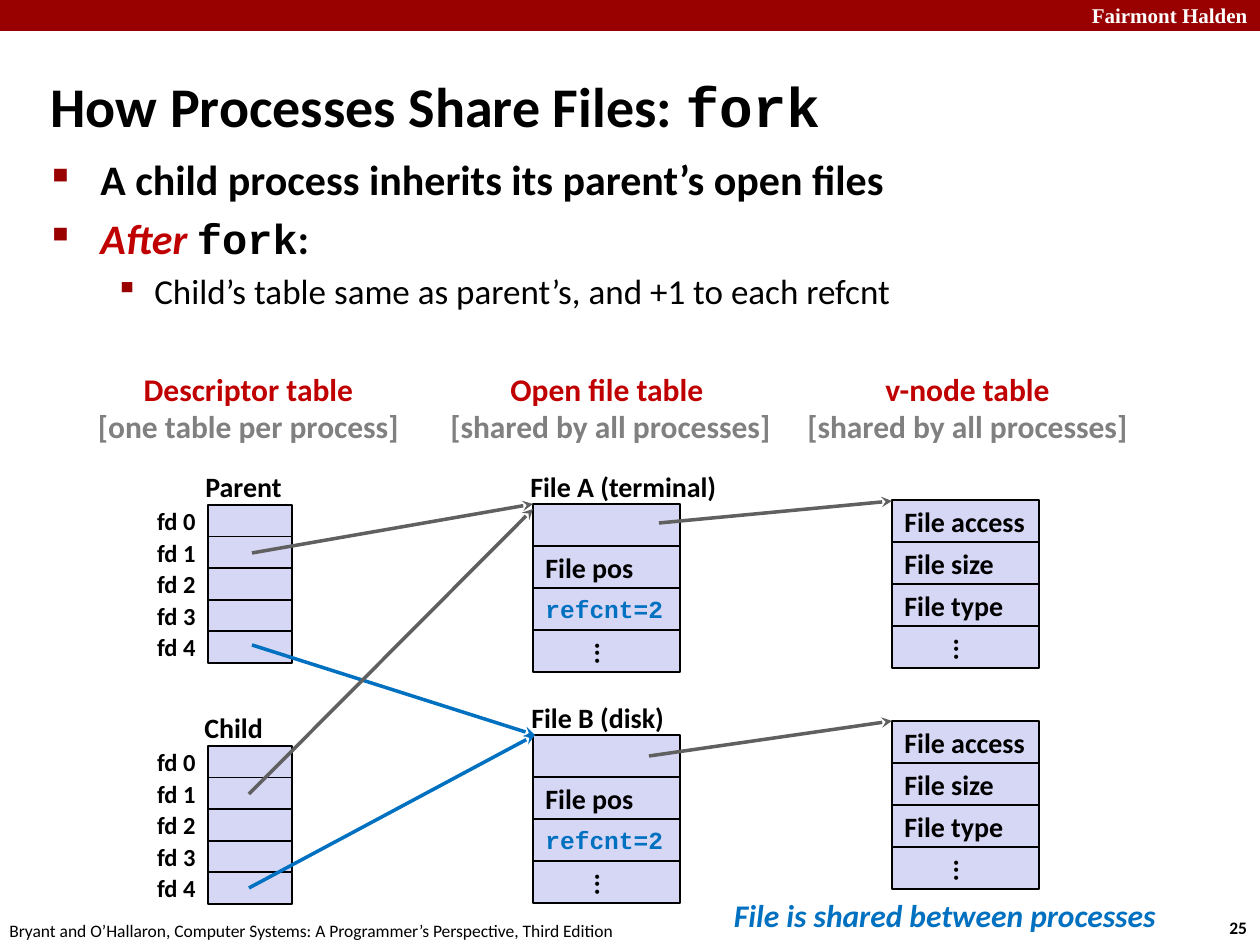
from lxml import etree
from pptx import Presentation
from pptx.dml.color import RGBColor
from pptx.enum.shapes import MSO_CONNECTOR, MSO_SHAPE
from pptx.enum.text import MSO_ANCHOR, PP_ALIGN
from pptx.oxml.ns import qn
from pptx.util import Emu, Pt

RECT, LINE = MSO_SHAPE.RECTANGLE, MSO_CONNECTOR.STRAIGHT
TOP, MID = MSO_ANCHOR.TOP, MSO_ANCHOR.MIDDLE
LEFT, CENTER, RIGHT = PP_ALIGN.LEFT, PP_ALIGN.CENTER, PP_ALIGN.RIGHT
SCALE = 914400 / 126

BLACK, WHITE, BAR, RED = "000000", "FFFFFF", "990000", "C00000"
GRAY, DARK, BLUE, LILAC = "808080", "606060", "0070C0", "D6D6F5"
CODE = {"name": "Courier New"}

TITLE = [("How Processes Share Files: ", {}), ("fork", CODE)]
BODY = [
    [("A child process inherits its parent’s open files", {})],
    [("After ", {"color": RED, "italic": True}), ("fork", CODE), (":", {})],
    [("Child’s table same as parent’s, and +1 to each refcnt",
      {"size": 20, "bold": False})],
]
# left margin, hanging indent (px), space before (pt), bullet, bullet size (%)
LEVELS = [(48, 48, 5, "■", 52), (48, 48, 5, "■", 52), (102, 39, 4, "▪", 90)]

HEADS = [  # left, width, name, scope
    (84, 329, "Descriptor table", "[one table per process]"),
    (436, 349, "Open file table ", "[shared by all processes]"),
    (793, 349, "v-node table", "[shared by all processes]"),
]
LABELS = [
    ((193, 463, 102, 46), "Parent"),
    ((192, 704, 84, 46), "Child"),
    ((518, 463, 213, 46), "File A (terminal)"),
    ((519, 694, 160, 46), "File B (disk)"),
]
SLOTS = ["fd 0", "fd 1", "fd 2", "fd 3", "fd 4"]
OPEN = ["", "File pos", "refcnt=2", "..."]
VNODE = ["File access", "File size", "File type", "..."]
STACKS = [  # left, top, width, height, cells
    (208, 505, 84, 158, [""] * len(SLOTS)),
    (208, 746, 84, 158, [""] * len(SLOTS)),
    (533, 504, 147, 168, OPEN),
    (533, 735, 147, 168, OPEN),
    (892, 500, 147, 168, VNODE),
    (892, 721, 147, 168, VNODE),
]
ARROWS = [
    (252, 553, 533, 504, DARK),
    (252, 645, 535, 735, BLUE),
    (659, 523, 892, 501, DARK),
    (649, 756, 892, 721, DARK),
    (249, 794, 533, 509, DARK),
    (249, 888, 535, 735, BLUE),
]


def px(n):
    return Emu(round(n * SCALE))


def rgb(code):
    return RGBColor.from_string(code)


def write(shape, paras, align=LEFT, anchor=MID, wrap=False, **base):
    """Fill a shape with paragraphs, each a list of (text, format) runs."""
    frame = shape.text_frame
    frame.word_wrap, frame.vertical_anchor = wrap, anchor
    for i, runs in enumerate(paras):
        para = frame.add_paragraph() if i else frame.paragraphs[0]
        para.alignment = align
        for words, own in runs:
            run = para.add_run()
            run.text = words
            look = {"name": "Calibri", "size": 16, "bold": True,
                    "color": BLACK, **base, **own}
            run.font.color.rgb = rgb(look.pop("color"))
            look["size"] = Pt(look["size"])
            for key, val in look.items():
                setattr(run.font, key, val)
    return frame


def note(box, paras, **opts):
    """Add a text box; a plain string makes one paragraph."""
    if isinstance(paras, str):
        paras = [[(paras, {})]]
    shape = slide.shapes.add_textbox(*map(px, box))
    return write(shape, paras, **opts)


def block(box, fill, edge=None):
    shape = slide.shapes.add_shape(RECT, *map(px, box))
    shape.shadow.inherit = False
    shape.fill.solid()
    shape.fill.fore_color.rgb = rgb(fill)
    if edge:
        shape.line.color.rgb = rgb(edge)
        shape.line.width = Pt(1)
    else:
        shape.line.fill.background()
    return shape


def stack(left, top, width, height, cells):
    step = height / len(cells)
    for i, words in enumerate(cells):
        cell = block((left, top + i * step, width, step), LILAC, BLACK)
        if words:
            look = {}
            if words.startswith("refcnt"):
                look = {**CODE, "size": 14, "color": BLUE}
            frame = write(cell, [[(words, look)]])
            if words == "...":
                frame._txBody.bodyPr.set("vert", "eaVert")


def arrow(x1, y1, x2, y2, color):
    line = slide.shapes.add_connector(LINE, *map(px, (x1, y1, x2, y2)))
    line.line.color.rgb = rgb(color)
    line.line.width = Pt(2)
    props = line._element.spPr
    etree.SubElement(props.find(qn("a:ln")), qn("a:tailEnd"), type="stealth")
    etree.SubElement(props, qn("a:effectLst"))


def bullet(para, margin, hang, space, mark, size):
    para.space_before = Pt(space)
    props = para._p.get_or_add_pPr()
    props.set("marL", str(px(margin)))
    props.set("indent", str(px(-hang)))
    tint = etree.SubElement(props, qn("a:buClr"))
    etree.SubElement(tint, qn("a:srgbClr"), val=BAR)
    etree.SubElement(props, qn("a:buSzPct"), val=str(size * 1000))
    etree.SubElement(props, qn("a:buChar"), char=mark)


deck = Presentation()
deck.slide_width, deck.slide_height = px(1260), px(945)
slide = deck.slides.add_slide(deck.slide_layouts[6])

block((0, 0, 1260, 31), BAR)
note((960, -4, 300, 38), "Fairmont Halden", align=RIGHT, anchor=TOP, wrap=True,
     name="Times New Roman", size=12, color=WHITE)
note((1217, 911, 47, 34), "25", anchor=TOP, size=10)
note((-3, 914, 640, 34), "Bryant and O’Hallaron, Computer Systems: "
     "A Programmer’s Perspective, Third Edition",
     anchor=TOP, size=10, bold=False)

note((38, 53, 1046, 105), [TITLE], wrap=True, size=32)
body = note((40, 147, 1145, 179), BODY, wrap=True, anchor=TOP, size=24)
for para, level in zip(body.paragraphs, LEVELS):
    bullet(para, *level)

for left, width, name, scope in HEADS:
    note((left, 363, width, 89), [[(name, {"color": RED})], [(scope, {"color": GRAY})]],
         align=CENTER, size=18)
for row in STACKS:
    stack(*row)
for left, top, width, height, _ in STACKS[:2]:
    step = height / len(SLOTS)
    for i, slot in enumerate(SLOTS):
        note((left - width, top + i * step, width, step), slot, align=RIGHT, size=14)
for box, words in LABELS:
    note(box, words)
for ends in ARROWS:
    arrow(*ends)
note((719, 890, 452, 50), "File is shared between processes",
     align=CENTER, size=18, color=BLUE, italic=True)

deck.save("out.pptx")
